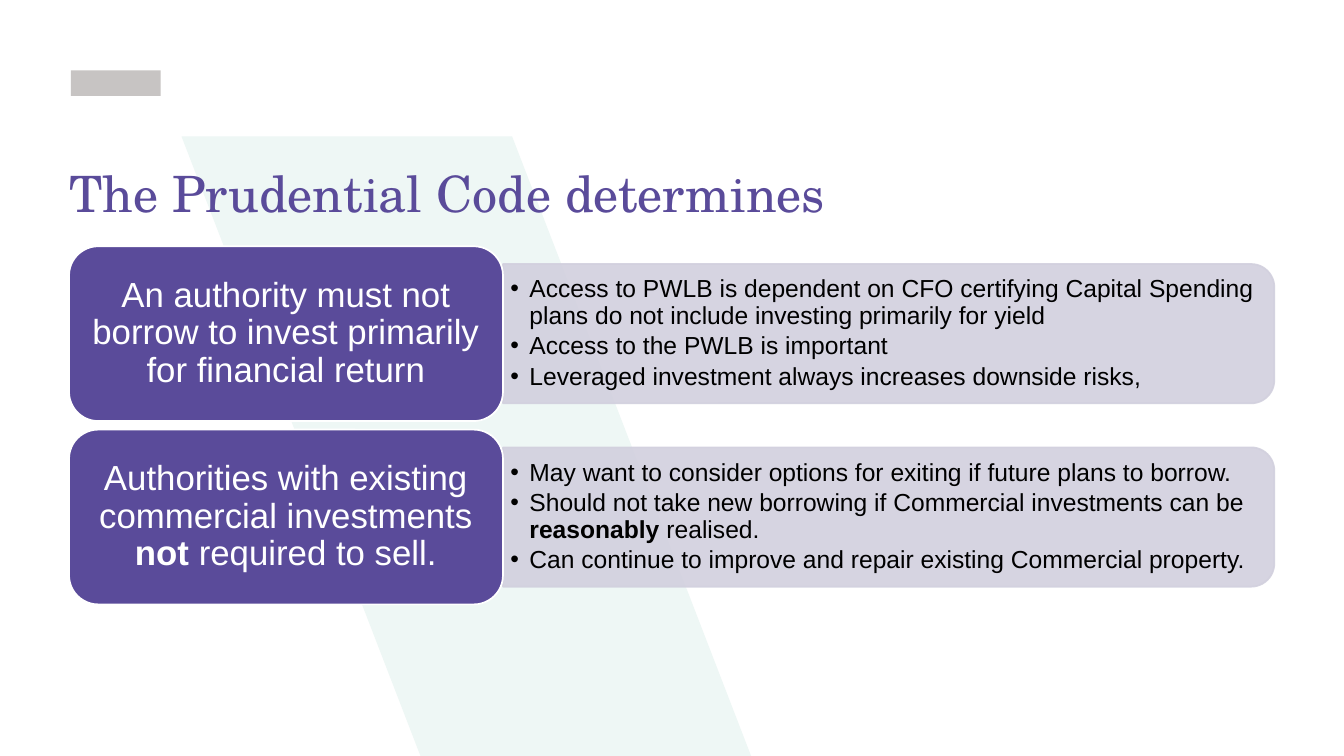
from dataclasses import dataclass

from lxml.etree import SubElement
from pptx import Presentation
from pptx.dml.color import RGBColor
from pptx.enum.shapes import MSO_SHAPE
from pptx.enum.text import MSO_ANCHOR, PP_ALIGN
from pptx.oxml.ns import qn
from pptx.util import Pt


@dataclass(frozen=True)
class Theme:
    purple: RGBColor = RGBColor(0x5A, 0x4B, 0x9A)
    lilac: RGBColor = RGBColor(0xD2, 0xD0, 0xDE)
    mint: RGBColor = RGBColor(0xEE, 0xF7, 0xF5)
    grey: RGBColor = RGBColor(0xC7, 0xC4, 0xC3)
    white: RGBColor = RGBColor(0xFF, 0xFF, 0xFF)
    black: RGBColor = RGBColor(0, 0, 0)
    title_font: str = "TeX Gyre Schola"
    body_font: str = "Arial"
    title_size: float = 59
    label_size: float = 41
    bullet_size: float = 29


THEME = Theme()
WIDTH, HEIGHT = 1583.28, 890.64
MARGIN = 81.36

# Each text is a list of (words, bold) runs
ROWS = [
    ([("An authority must not borrow to invest primarily for financial return", False)],
     [[("Access to PWLB is dependent on CFO certifying Capital Spending plans "
        "do not include investing primarily for yield", False)],
      [("Access to the PWLB is important", False)],
      [("Leveraged investment always increases downside risks,", False)]]),
    ([("Authorities with existing commercial investments ", False),
      ("not", True), (" required to sell.", False)],
     [[("May want to consider options for exiting if future plans to borrow.", False)],
      [("Should not take new borrowing if Commercial investments can be", False),
       (" reasonably ", True), ("realised.", False)],
      [("Can continue to improve and repair existing Commercial property.", False)]]),
]


def paint(sp, fill, line=None, alpha=None):
    sp.shadow.inherit = False
    sp.fill.solid()
    sp.fill.fore_color.rgb = fill
    if line is None:
        sp.line.fill.background()
    else:
        sp.line.color.rgb = line
        sp.line.width = Pt(2)
    if alpha is not None:
        for color in sp._element.spPr.iter(qn("a:srgbClr")):
            SubElement(color, qn("a:alpha"), val=str(alpha * 1000))


def set_frame(tf, inset_x, inset_y, anchor):
    tf.word_wrap = True
    tf.margin_left = tf.margin_right = Pt(inset_x)
    tf.margin_top = tf.margin_bottom = Pt(inset_y)
    tf.vertical_anchor = anchor


def add_runs(p, runs, font, size, color):
    for words, bold in runs:
        r = p.add_run()
        r.text = words
        r.font.name, r.font.size, r.font.bold = font, Pt(size), bold
        r.font.color.rgb = color


def make_bullet(p, indent):
    pPr = p._p.get_or_add_pPr()
    pPr.set("marL", str(Pt(indent)))
    pPr.set("indent", str(-Pt(indent)))
    SubElement(pPr, qn("a:buFont"), typeface="Arial")
    SubElement(pPr, qn("a:buChar"), char="•")


def add_backdrop(s, x, y, w, h):
    # Slanted band running down to the slide's bottom edge
    band, slant = 389.5, w - 389.5
    builder = s.shapes.build_freeform(Pt(x), Pt(y))
    corners = [(x + band, y), (x + w, y + h), (x + slant, y + h)]
    builder.add_line_segments([(Pt(px), Pt(py)) for px, py in corners])
    paint(builder.convert_to_shape(), THEME.mint)

    # Plain block in the logo's place
    block = s.shapes.add_shape(MSO_SHAPE.RECTANGLE, Pt(MARGIN + 2), Pt(83), Pt(106), Pt(30))
    paint(block, THEME.grey)


def add_title(s, x, y, w, h):
    tf = s.shapes.add_textbox(Pt(x), Pt(y), Pt(w), Pt(h)).text_frame
    set_frame(tf, 0, 0, MSO_ANCHOR.TOP)
    add_runs(tf.paragraphs[0], [("The Prudential Code determines", False)],
             THEME.title_font, THEME.title_size, THEME.purple)


def add_row(s, x, y, w, h, label, bullets):
    label_w, panel_h, text_h = 511.2, 164.16, 148.32
    panel_x, panel_w, middle = x + label_w, w - label_w, y + h / 2

    # Panel: a shape with two rounded top corners, turned to face right
    panel = s.shapes.add_shape(
        MSO_SHAPE.ROUND_2_SAME_RECTANGLE,
        Pt(panel_x + (panel_w - panel_h) / 2), Pt(middle - panel_w / 2),
        Pt(panel_h), Pt(panel_w))
    panel.rotation = 90
    paint(panel, THEME.lilac, THEME.lilac, alpha=90)

    # Bullets, upright over the panel
    tf = s.shapes.add_textbox(Pt(panel_x), Pt(middle - text_h / 2),
                              Pt(panel_w - 8), Pt(text_h)).text_frame
    set_frame(tf, 8.64, 4.32, MSO_ANCHOR.MIDDLE)
    for i, runs in enumerate(bullets):
        p = tf.add_paragraph() if i else tf.paragraphs[0]
        p.line_spacing, p.space_after = 0.9, Pt(4.5)
        make_bullet(p, 22.5)
        add_runs(p, runs, THEME.body_font, THEME.bullet_size, THEME.black)

    # Label
    sp = s.shapes.add_shape(MSO_SHAPE.ROUNDED_RECTANGLE, Pt(x), Pt(y), Pt(label_w), Pt(h))
    paint(sp, THEME.purple, THEME.white)
    set_frame(sp.text_frame, 12.24, 6.48, MSO_ANCHOR.MIDDLE)
    p = sp.text_frame.paragraphs[0]
    p.alignment, p.line_spacing = PP_ALIGN.CENTER, 0.9
    add_runs(p, label, THEME.body_font, THEME.label_size, THEME.white)


def main():
    prs = Presentation()
    prs.slide_width, prs.slide_height = Pt(WIDTH), Pt(HEIGHT)
    s = prs.slides.add_slide(prs.slide_layouts[6])

    add_backdrop(s, 213.84, 160.8, 671, HEIGHT - 160.8)
    add_title(s, MARGIN, 190.8, 906.5, 76.3)
    row_h, gap = 205.92, 10.08
    for i, (label, bullets) in enumerate(ROWS):
        add_row(s, MARGIN, 290.16 + i * (row_h + gap), 1419.84, row_h, label, bullets)

    prs.save("out.pptx")


if __name__ == "__main__":
    main()
